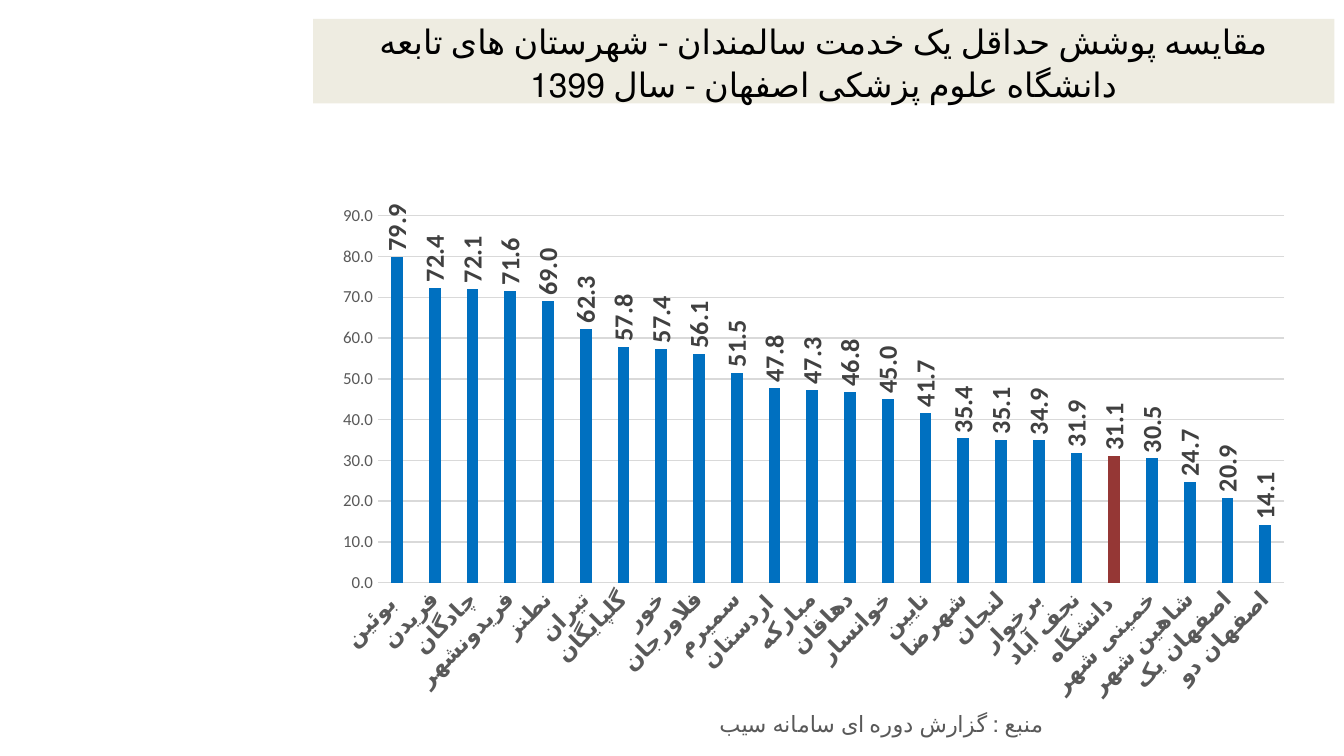
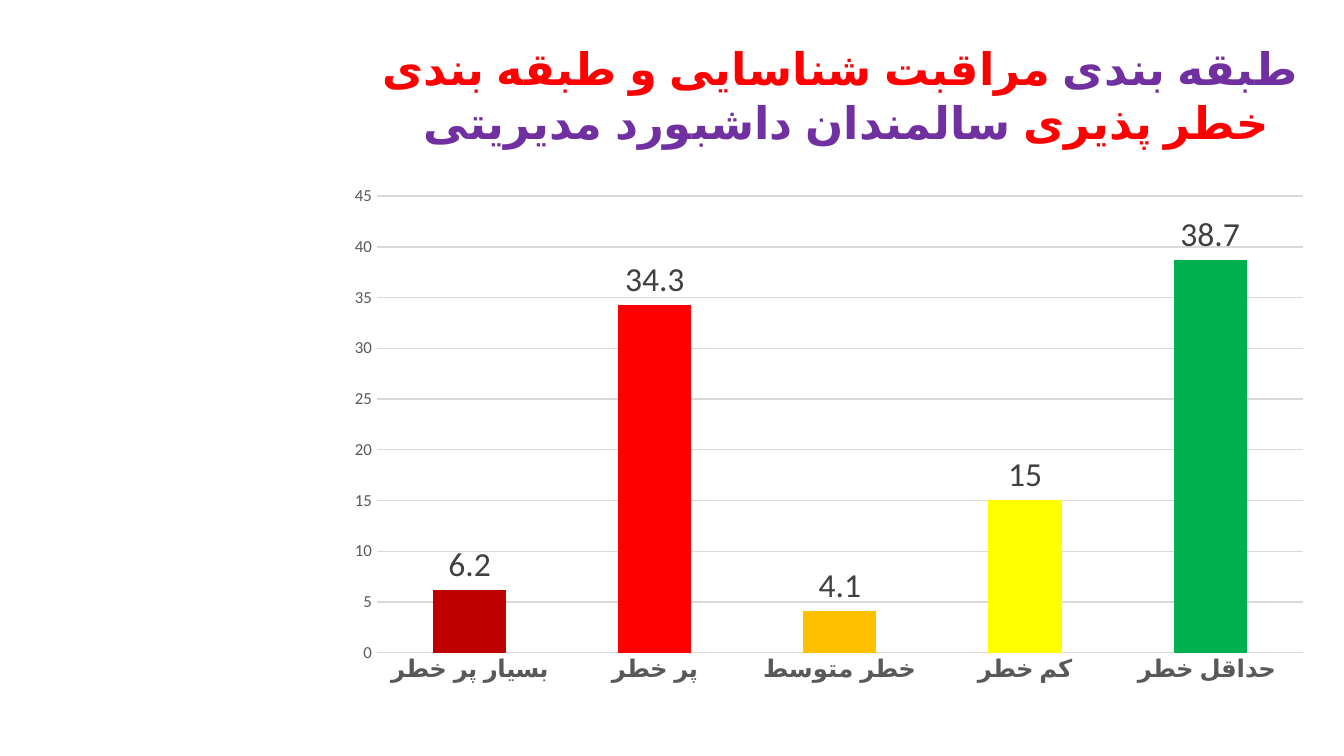
from lxml import etree
from pptx import Presentation
from pptx import util as u
from pptx.chart.data import CategoryChartData
from pptx.dml.color import RGBColor
from pptx.enum import chart as charts, lang, text
from pptx.oxml import ns

# Content
COVERAGE = [
    ("بوئین ", 79.9), ("فریدن", 72.4), ("چادگان", 72.1), ("فریدونشهر", 71.6),
    ("نطنز", 69), ("تیران", 62.3), ("گلپایگان", 57.8), ("خور", 57.4),
    ("فلاورجان", 56.1), ("سمیرم", 51.5), ("اردستان ", 47.8), ("مبارکه", 47.3),
    ("دهاقان", 46.8), ("خوانسار", 45), ("نایین", 41.7), ("شهرضا", 35.4),
    ("لنجان", 35.1), ("برخوار", 34.9), ("نجف آباد", 31.9), ("دانشگاه ", 31.1),
    ("خمینی شهر", 30.5), ("شاهین شهر", 24.7), ("اصفهان یک", 20.9), ("اصفهان دو", 14.1),
]
RISK = [
    ("بسیار پر خطر", 6.2), ("پر خطر", 34.3), ("خطر متوسط", 4.1),
    ("کم خطر", 15), ("حداقل خطر ", 38.7),
]


class Theme:
    font = "Calibri"
    black, axis_text, label_text, grid = "000000", "595959", "404040", "D9D9D9"
    band, purple, red = "EEECE1", "7030A0", "FF0000"
    bar, highlight, spare_bar = "0070C0", "953735", "4F81BD"
    risk = ("C00000", "FF0000", "FFC000", "FFFF00", "00B050")
    chart_size, value_size, source_size = 10, 9, 12


SLIDES = [
    {
        "title": {
            "box": (2.33, 0.14, 7.6, 0.63), "fill": Theme.band,
            "runs": [("مقایسه پوشش حداقل یک خدمت سالمندان - شهرستان های تابعه "
                      "دانشگاه علوم پزشکی اصفهان - سال 1399", Theme.black)],
            "font": {"size": 18, "bold": False},
            "spacing": {"line_spacing": 1.07, "space_after": u.Pt(8)},
        },
        "chart": {
            "box": (2.49, 0.77, 7.18, 4.86), "data": COVERAGE, "color": Theme.bar,
            "points": {19: Theme.highlight}, "gap": 219, "overlap": -27,
            "top": 90, "step": 10, "format": "0.0",
            "category_size": 12, "category_turn": -45,
            "label_size": 14, "label_bold": True, "label_turn": -90,
            "plot": {"x": 0.045, "y": 0.172, "w": 0.939, "h": 0.562},
            "source": "منبع : گزارش دوره ای سامانه سیب",
            "source_place": {"x": 0.394, "y": 0.925},
        },
    },
    {
        "title": {
            "box": (2.66, 0.31, 7.18, 0.79), "fill": None,
            "runs": [("طبقه بندی ", Theme.purple),
                     ("مراقبت شناسایی و طبقه بندی خطر پذیری ", Theme.red),
                     ("سالمندان داشبورد مدیریتی ", Theme.purple)],
            "font": {"size": 24, "bold": True},
            "spacing": {},
        },
        "chart": {
            "box": (2.49, 1.31, 7.35, 3.84), "data": RISK, "color": Theme.spare_bar,
            "points": dict(enumerate(Theme.risk)), "gap": 153, "overlap": 63,
            "top": 45, "step": 5, "format": "General",
            "category_size": 13, "category_turn": 0,
            "label_size": 18, "label_bold": False, "label_turn": 0,
            "plot": {"x": 0.043, "y": 0.039, "w": 0.937, "h": 0.885},
            "source": None,
        },
    },
]


# Formatting helpers
def set_font(font, size, color, bold=False):
    values = {"name": Theme.font, "size": u.Pt(size), "bold": bold}
    for name, value in values.items():
        setattr(font, name, value)
    font.color.rgb = RGBColor.from_string(color)


def set_fill(target, color):
    target.fill.solid()
    target.fill.fore_color.rgb = RGBColor.from_string(color)


def set_line(line, color):
    line.color.rgb = RGBColor.from_string(color)
    line.width = u.Pt(0.75)


def right_to_left(paragraph):
    paragraph._p.get_or_add_pPr().set("rtl", "1")


def turn_text(element, degrees):
    body = element.find(ns.qn("c:txPr")).find(ns.qn("a:bodyPr"))
    body.set("rot", str(degrees * 60000))
    body.set("vert", "horz")


def place(parent, position, previous=None, inner=False):
    """Give a chart part a manual layout, as fractions of the chart."""
    for old in parent.findall(ns.qn("c:layout")):
        parent.remove(old)
    layout = etree.Element(ns.qn("c:layout"))
    manual = etree.SubElement(layout, ns.qn("c:manualLayout"))
    settings = [("layoutTarget", "inner")] if inner else []
    settings += [("xMode", "edge"), ("yMode", "edge"), *position.items()]
    for tag, value in settings:
        etree.SubElement(manual, ns.qn(f"c:{tag}")).set("val", str(value))
    if previous is None:
        parent.insert(0, layout)
    else:
        previous.addnext(layout)


# Slide parts
def add_title(slide, title):
    shape = slide.shapes.add_textbox(*map(u.Inches, title["box"]))
    if title["fill"]:
        set_fill(shape, title["fill"])
    frame = shape.text_frame
    frame.word_wrap = True
    frame.vertical_anchor = text.MSO_ANCHOR.MIDDLE
    paragraph = frame.paragraphs[0]
    paragraph.alignment = text.PP_ALIGN.CENTER
    right_to_left(paragraph)
    for name, value in title["spacing"].items():
        setattr(paragraph, name, value)
    for words, color in title["runs"]:
        run = paragraph.add_run()
        run.text = words
        set_font(run.font, color=color, **title["font"])
        run.font.language_id = lang.MSO_LANGUAGE_ID.FARSI


def format_axes(chart, item):
    category, value = chart.category_axis, chart.value_axis
    for axis in (category, value):
        axis.major_tick_mark = axis.minor_tick_mark = charts.XL_TICK_MARK.NONE
    set_font(category.tick_labels.font, item["category_size"], Theme.axis_text, True)
    turn_text(category._element, item["category_turn"])
    set_line(category.format.line, Theme.grid)

    scale = {"minimum_scale": 0, "maximum_scale": item["top"],
             "major_unit": item["step"], "has_major_gridlines": True}
    for name, setting in scale.items():
        setattr(value, name, setting)
    set_font(value.tick_labels.font, Theme.value_size, Theme.axis_text)
    value.tick_labels.number_format = item["format"]
    value.tick_labels.number_format_is_linked = False
    value.format.line.fill.background()
    set_line(value.major_gridlines.format.line, Theme.grid)


def format_bars(plot, item):
    bars = {"gap_width": item["gap"], "overlap": item["overlap"],
            "vary_by_categories": False}
    for name, value in bars.items():
        setattr(plot, name, value)
    series = plot.series[0]
    series.invert_if_negative = False
    set_fill(series.format, item["color"])
    for index, color in item["points"].items():
        set_fill(series.points[index].format, color)

    labels = series.data_labels
    values = {"show_value": True, "number_format": item["format"],
              "number_format_is_linked": False,
              "position": charts.XL_LABEL_POSITION.OUTSIDE_END}
    for name, value in values.items():
        setattr(labels, name, value)
    set_font(labels.font, item["label_size"], Theme.label_text, item["label_bold"])
    turn_text(labels._element, item["label_turn"])


def add_source(chart, item):
    paragraph = chart.chart_title.text_frame.paragraphs[0]
    right_to_left(paragraph)
    run = paragraph.add_run()
    run.text = item["source"]
    set_font(run.font, Theme.source_size, Theme.axis_text)
    chart.chart_title.include_in_layout = False
    element = chart.chart_title._element
    place(element, item["source_place"], element.find(ns.qn("c:tx")))


def add_bar_chart(slide, item):
    names, values = zip(*item["data"])
    data = CategoryChartData(number_format=item["format"])
    data.categories = names
    data.add_series("Series 1", values)
    chart = slide.shapes.add_chart(charts.XL_CHART_TYPE.COLUMN_CLUSTERED,
                                   *map(u.Inches, item["box"]), data).chart
    set_font(chart.font, Theme.chart_size, Theme.black)
    chart.has_legend = False
    chart.has_title = bool(item["source"])
    if item["source"]:
        add_source(chart, item)
    format_axes(chart, item)
    format_bars(chart.plots[0], item)
    place(chart._chartSpace.find(".//" + ns.qn("c:plotArea")), item["plot"], inner=True)


def main():
    presentation = Presentation()
    presentation.slide_width = u.Inches(10)
    presentation.slide_height = presentation.slide_width * 9 // 16
    for content in SLIDES:
        slide = presentation.slides.add_slide(presentation.slide_layouts[6])
        add_title(slide, content["title"])
        add_bar_chart(slide, content["chart"])
    presentation.save("out.pptx")


if __name__ == "__main__":
    main()
